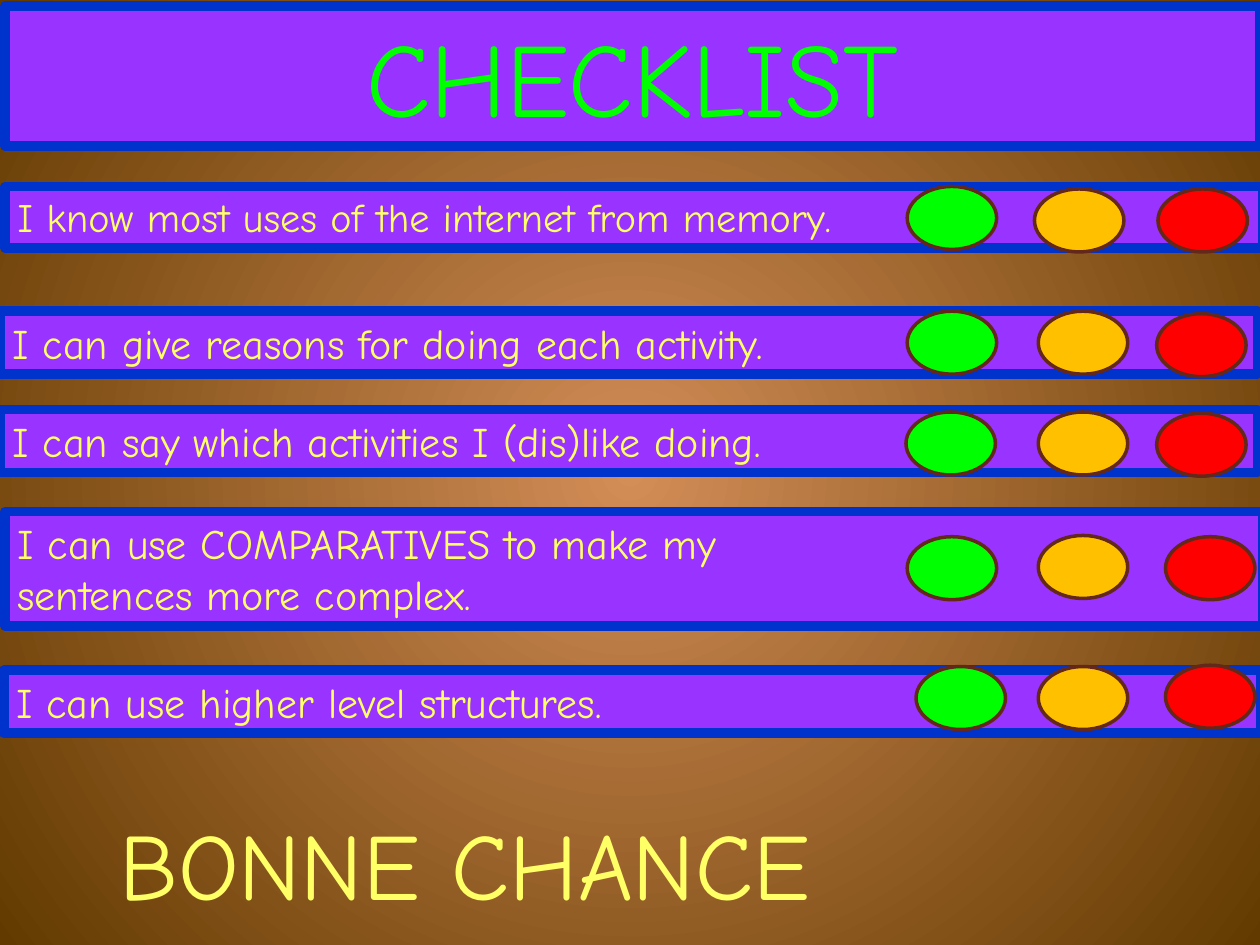
from lxml import etree
from pptx import Presentation
from pptx.dml.color import RGBColor
from pptx.enum.shapes import MSO_SHAPE
from pptx.enum.text import MSO_ANCHOR, MSO_AUTO_SIZE, PP_ALIGN
from pptx.oxml.ns import qn
from pptx.util import Inches, Pt

RECTANGLE, OVAL = MSO_SHAPE.RECTANGLE, MSO_SHAPE.OVAL
TOP, GROW = MSO_ANCHOR.TOP, MSO_AUTO_SIZE.SHAPE_TO_FIT_TEXT
LEFT, CENTER = PP_ALIGN.LEFT, PP_ALIGN.CENTER

FONT = "Comic Neue"
PURPLE, BLUE, BROWN = "9933FF", "0033CC", "64281B"
GREEN, AMBER, RED, YELLOW = "00FF00", "FFC000", "FF0000", "FFFF66"
GLOW = ("D38D57", "623A00")

TITLE = "CHECKLIST"
FAREWELL = "BONNE CHANCE"
BAR_WIDTH = 9.98
LIGHT_SIZE = (0.71, 0.5)
LIGHT_COLORS = (GREEN, AMBER, RED)

# lines, text size, bar (left, top, height), light positions (left, top)
GOALS = [
    (["I know most uses of the internet from memory."], 23,
     (0.04, 1.48, 0.49), [(7.2, 1.48), (8.21, 1.5), (9.19, 1.5)]),
    (["I can give reasons for doing each activity."], 24,
     (0, 2.47, 0.5), [(7.2, 2.47), (8.24, 2.47), (9.18, 2.49)]),
    (["I can say which activities I (dis)like doing."], 24,
     (0, 3.25, 0.5), [(7.19, 3.27), (8.24, 3.27), (9.18, 3.28)]),
    (["I can use COMPARATIVES to make my", "sentences more complex."], 24,
     (0.04, 4.06, 0.91), [(7.2, 4.26), (8.24, 4.25), (9.25, 4.26)]),
    (["I can use higher level structures."], 24,
     (0.03, 5.32, 0.5), [(7.27, 5.29), (8.24, 5.29), (9.25, 5.28)]),
]


def rgb(color):
    return RGBColor.from_string(color)


def paint_background(slide):
    fill = slide.background.fill
    fill.gradient()
    for stop, color in zip(fill.gradient_stops, GLOW):
        stop.color.rgb = rgb(color)
    gradient = slide.element.find(".//" + qn("a:gradFill"))
    gradient.remove(gradient.find(qn("a:lin")))
    circle = etree.SubElement(gradient, qn("a:path"), path="circle")
    etree.SubElement(circle, qn("a:fillToRect"),
                     l="50000", t="50000", r="50000", b="50000")


def add_outlined(slide, kind, box, fill, line, weight):
    shape = slide.shapes.add_shape(kind, *map(Inches, box))
    shape.shadow.inherit = False
    shape.fill.solid()
    shape.fill.fore_color.rgb = rgb(fill)
    shape.line.color.rgb = rgb(line)
    shape.line.width = Pt(weight)
    etree.SubElement(shape.element.spPr.find(qn("a:ln")), qn("a:round"))
    return shape


def write(shape, lines, size, color, align=LEFT):
    frame = shape.text_frame
    frame.word_wrap = True
    frame.auto_size = GROW
    frame.vertical_anchor = TOP
    for index, line in enumerate(lines):
        paragraph = frame.add_paragraph() if index else frame.paragraphs[0]
        paragraph.alignment = align
        run = paragraph.add_run()
        run.text = line
        run.font.name = FONT
        run.font.size = Pt(size)
        run.font.color.rgb = rgb(color)


def add_bar(slide, box, lines, size, color, align=LEFT):
    bar = add_outlined(slide, RECTANGLE, box, PURPLE, BLUE, 5.5)
    write(bar, lines, size, color, align)


def main():
    deck = Presentation()
    deck.slide_width, deck.slide_height = Inches(10), Inches(7.5)
    slide = deck.slides.add_slide(deck.slide_layouts[6])
    paint_background(slide)

    add_bar(slide, (0.04, 0.05, 9.96, 1.11), [TITLE], 60, GREEN, CENTER)
    for lines, size, (left, top, height), lights in GOALS:
        add_bar(slide, (left, top, BAR_WIDTH, height), lines, size, YELLOW)
        for position, color in zip(lights, LIGHT_COLORS):
            add_outlined(slide, OVAL, position + LIGHT_SIZE, color, BROWN, 2)

    farewell = slide.shapes.add_textbox(*map(Inches, (0.85, 6.35, 6.77, 1.01)))
    write(farewell, [FAREWELL], 54, YELLOW)

    deck.save("out.pptx")


if __name__ == "__main__":
    main()
